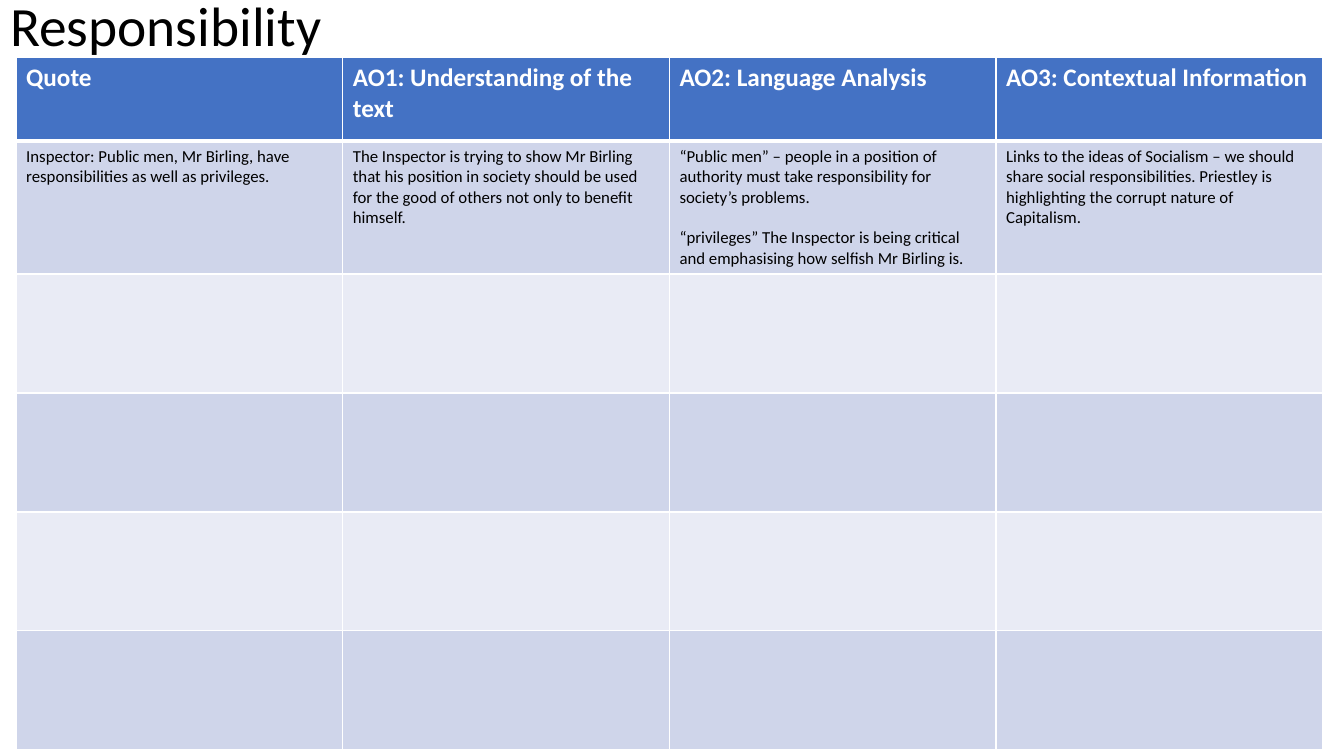
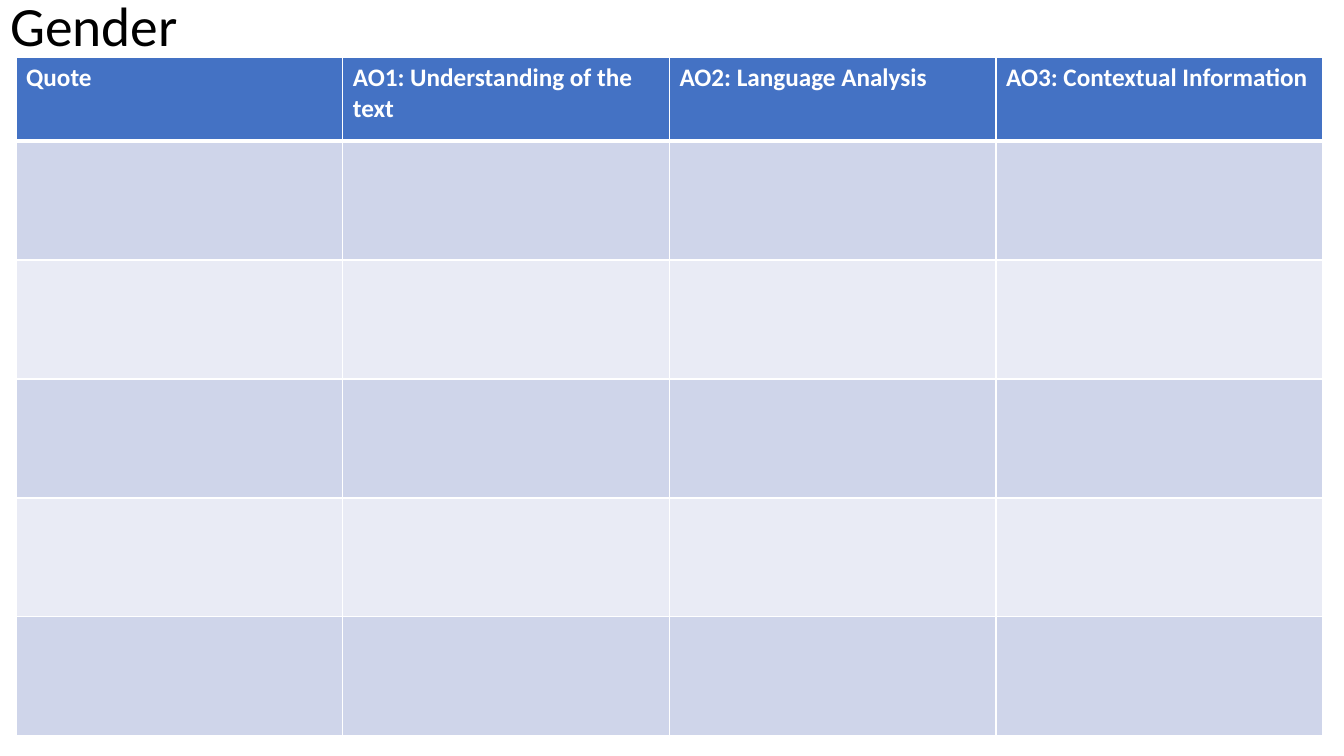
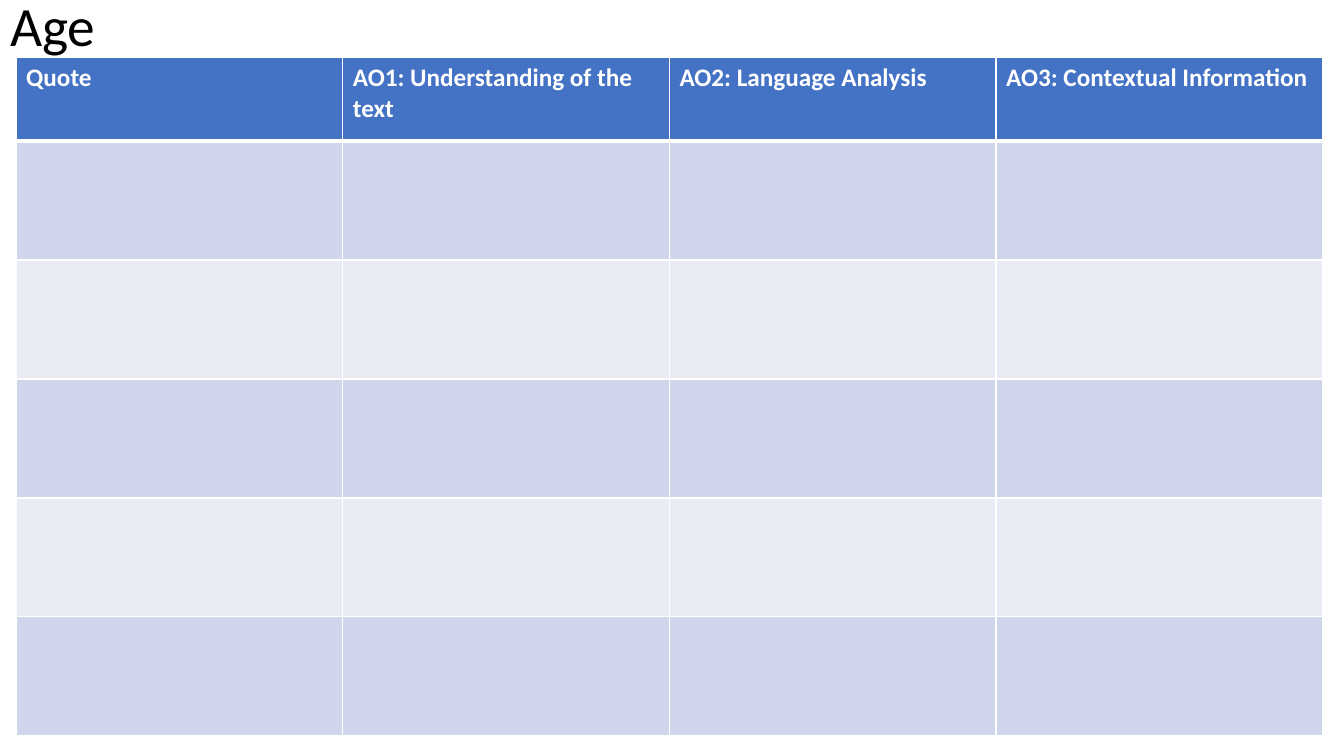
from lxml.etree import SubElement
from pptx import Presentation
from pptx.dml.color import RGBColor
from pptx.enum.text import MSO_ANCHOR, MSO_AUTO_SIZE, PP_ALIGN
from pptx.oxml.ns import qn
from pptx.util import Inches, Pt

HEADINGS = ["Quote", "AO1: Understanding of the text",
            "AO2: Language Analysis", "AO3: Contextual Information"]
# Each theme has its worked example: one list of paragraphs per column.
THEMES = [
    ("Responsibility", [
        ["Inspector: Public men, Mr Birling, have responsibilities as well as privileges."],
        ["The Inspector is trying to show Mr Birling that his position in society should "
         "be used for the good of others not only to benefit himself."],
        ["“Public men” – people in a position of authority must take responsibility for "
         "society’s problems.",
         "“privileges” The Inspector is being critical and emphasising how selfish "
         "Mr Birling is."],
        ["Links to the ideas of Socialism – we should share social responsibilities. "
         "Priestley is highlighting the corrupt nature of Capitalism."],
    ]),
    ("Gender", []),
    ("Age", []),
]

FONT = "Calibri"
WHITE, BLACK = "FFFFFF", "000000"
HEADER_FILL = "4472C4"
BAND_FILLS = ["CFD5EA", "E9EBF5"]
TITLE_TEXT = {"size": Pt(39.6), "bold": False}
HEADER_TEXT = {"size": Pt(18), "bold": True}
BODY_TEXT = {"size": Pt(12), "bold": False}

BODY_ROWS = 5
TABLE_LEFT, TABLE_TOP = 0.16, 0.57
COLUMN_WIDTH = 3.24
HEADER_HEIGHT, BODY_HEIGHT, EXAMPLE_HEIGHT = 0.83, 1.18, 1.3
THIN, THICK = 1, 3


def rgb(value):
    return RGBColor.from_string(value)


def format_paragraph(paragraph, colour, text_format):
    paragraph.font.name = FONT
    paragraph.font.color.rgb = rgb(colour)
    for attribute, value in text_format.items():
        setattr(paragraph.font, attribute, value)


def set_borders(cell, top, bottom):
    """Draw white borders; top and bottom are widths in points."""
    properties = cell._tc.get_or_add_tcPr()
    widths = {"a:lnL": THIN, "a:lnR": THIN, "a:lnT": top, "a:lnB": bottom}
    for position, (tag, width) in enumerate(widths.items()):
        line = SubElement(properties, qn(tag), w=str(Pt(width)))
        colour = SubElement(SubElement(line, qn("a:solidFill")), qn("a:srgbClr"))
        colour.set("val", WHITE)
        properties.insert(position, line)


def fill_cell(cell, paragraphs, colour, text_format):
    frame = cell.text_frame
    for index, text in enumerate(paragraphs):
        paragraph = frame.add_paragraph() if index else frame.paragraphs[0]
        paragraph.text = text
        format_paragraph(paragraph, colour, text_format)
        if index:
            paragraph.space_before = Pt(14.6)


def add_title(slide, theme):
    title = slide.shapes.title
    title.left, title.top = Inches(0), Inches(0)
    title.width, title.height = Inches(3.32), Inches(TABLE_TOP)
    frame = title.text_frame
    frame.text = theme
    frame.word_wrap = True
    frame.auto_size = MSO_AUTO_SIZE.NONE
    frame.vertical_anchor = MSO_ANCHOR.MIDDLE
    paragraph = frame.paragraphs[0]
    paragraph.alignment = PP_ALIGN.LEFT
    paragraph.line_spacing = 0.9
    format_paragraph(paragraph, BLACK, TITLE_TEXT)


def add_quote_table(slide, example):
    heights = [HEADER_HEIGHT] + [BODY_HEIGHT] * BODY_ROWS
    if example:
        heights[1] = EXAMPLE_HEIGHT
    table = slide.shapes.add_table(
        len(heights), len(HEADINGS), Inches(TABLE_LEFT), Inches(TABLE_TOP),
        Inches(COLUMN_WIDTH * len(HEADINGS)), Inches(sum(heights))).table
    for column in table.columns:
        column.width = Inches(COLUMN_WIDTH)

    for row_index, height in enumerate(heights):
        table.rows[row_index].height = Inches(height)
        is_header = row_index == 0
        fill = HEADER_FILL if is_header else BAND_FILLS[(row_index - 1) % 2]
        for cell in table.rows[row_index].cells:
            cell.fill.solid()
            cell.fill.fore_color.rgb = rgb(fill)
            set_borders(cell, THICK if row_index == 1 else THIN,
                        THICK if is_header else THIN)

    for column_index, heading in enumerate(HEADINGS):
        fill_cell(table.cell(0, column_index), [heading], WHITE, HEADER_TEXT)
    for column_index, paragraphs in enumerate(example):
        fill_cell(table.cell(1, column_index), paragraphs, BLACK, BODY_TEXT)


def main():
    presentation = Presentation()
    presentation.slide_width, presentation.slide_height = Inches(13.33), Inches(7.5)
    title_only = presentation.slide_layouts[5]
    for theme, example in THEMES:
        slide = presentation.slides.add_slide(title_only)
        add_title(slide, theme)
        add_quote_table(slide, example)
    presentation.save("out.pptx")


if __name__ == "__main__":
    main()
